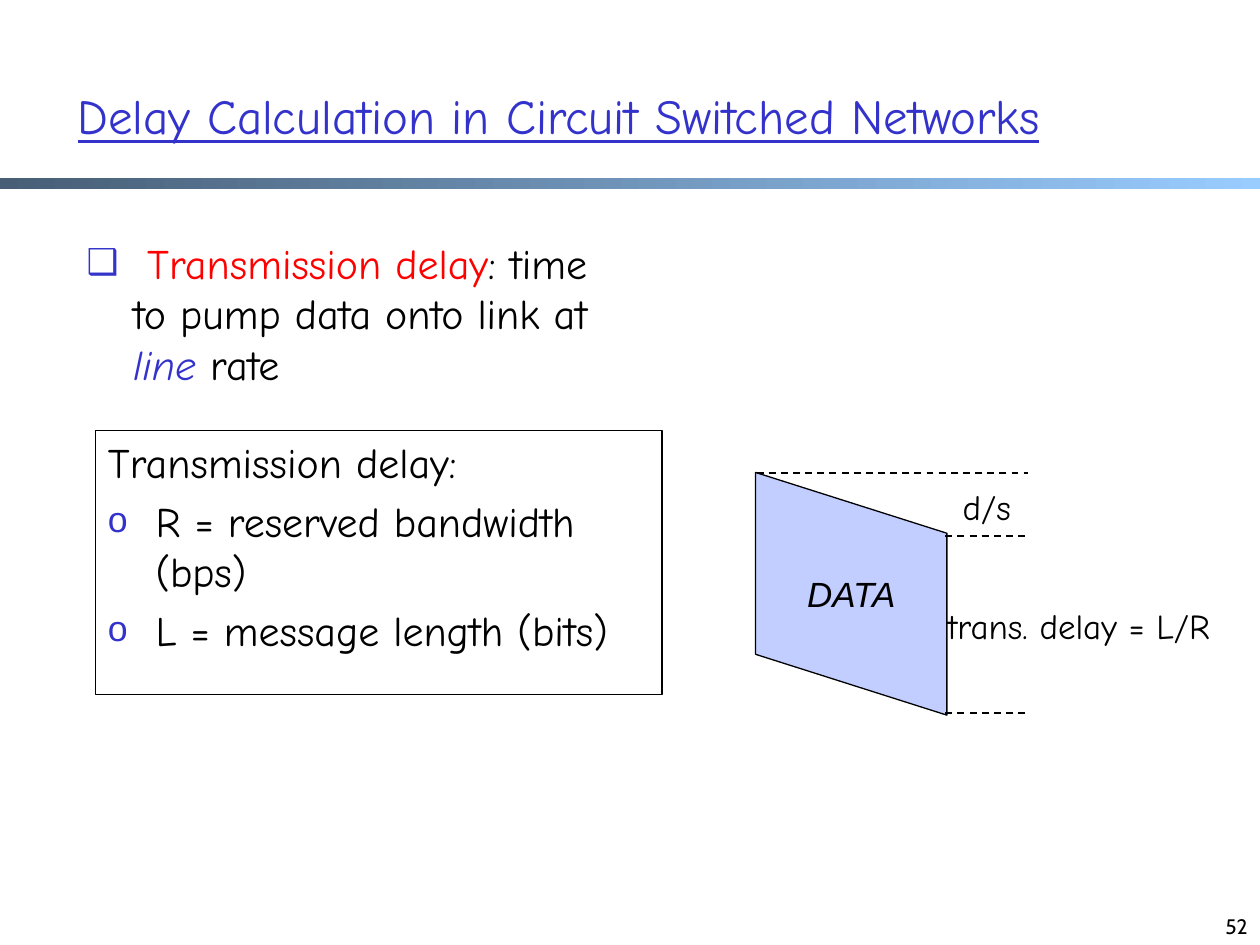
"""Build the slide on transmission delay in circuit switched networks."""
from lxml import etree
from pptx import Presentation
from pptx import util as u
from pptx.dml.color import RGBColor
from pptx.enum import dml, shapes, text
from pptx.oxml import ns

COLORS = {
    "black": "000000",
    "blue": "3333CC",
    "red": "FF0000",
    "data": "C1CEFF",
    "bar_start": "475E76",
    "bar_end": "99CCFF",
}


class SlideBuilder:
    """Hold the style and the current slide, and add elements to it."""

    font = "Comic Neue"

    def __init__(self, slide):
        self.slide = slide

    def color(self, name):
        """Return the named colour."""
        return RGBColor.from_string(COLORS[name])

    def bullet(self, paragraph, character, indent):
        """Give a paragraph a hanging blue bullet."""
        properties = paragraph._p.get_or_add_pPr()
        properties.set("marL", str(u.Cm(indent)))
        properties.set("indent", str(-u.Cm(indent)))
        bullet_color = etree.SubElement(properties, ns.qn("a:buClr"))
        etree.SubElement(bullet_color, ns.qn("a:srgbClr"), val=COLORS["blue"])
        etree.SubElement(properties, ns.qn("a:buSzPct"), val="85000")
        etree.SubElement(properties, ns.qn("a:buFont"), typeface="Arial")
        etree.SubElement(properties, ns.qn("a:buChar"), char=character)

    def run(self, paragraph, content, size, color="black", font=None, italic=False, underline=False):
        """Add one formatted run to a paragraph."""
        run = paragraph.add_run()
        run.text = content
        run.font.name = font or self.font
        run.font.size = u.Pt(size)
        run.font.color.rgb = self.color(color)
        run.font.italic = italic
        run.font.underline = underline

    def text_box(self, left, top, width, height, anchor=text.MSO_ANCHOR.TOP, wrap=True):
        """Add an empty text box and return its text frame."""
        shape = self.slide.shapes.add_textbox(u.Cm(left), u.Cm(top), u.Cm(width), u.Cm(height))
        frame = shape.text_frame
        frame.word_wrap = wrap
        frame.vertical_anchor = anchor
        return frame

    def shape(self, kind, left, top, width, height, fill=None):
        """Add an outlined preset shape."""
        shape = self.slide.shapes.add_shape(kind, u.Cm(left), u.Cm(top), u.Cm(width), u.Cm(height))
        shape.shadow.inherit = False
        if fill:
            shape.fill.solid()
            shape.fill.fore_color.rgb = self.color(fill)
        else:
            shape.fill.background()
        shape.line.color.rgb = self.color("black")
        shape.line.width = u.Pt(0.75)
        return shape

    def gradient_bar(self, left, top, width, height):
        """Add a bar that fades from left to right."""
        bar = self.shape(shapes.MSO_SHAPE.RECTANGLE, left, top, width, height)
        bar.line.fill.background()
        bar.fill.gradient()
        bar.fill.gradient_angle = 0
        for stop, name in zip(bar.fill.gradient_stops, ("bar_start", "bar_end")):
            stop.color.rgb = self.color(name)

    def dashed_line(self, left, right, y):
        """Add a horizontal dashed line."""
        line = self.slide.shapes.add_connector(
            shapes.MSO_CONNECTOR.STRAIGHT, u.Cm(left), u.Cm(y), u.Cm(right), u.Cm(y))
        line.line.color.rgb = self.color("black")
        line.line.width = u.Pt(1)
        line.line.dash_style = dml.MSO_LINE.DASH
        etree.SubElement(line._element.spPr, ns.qn("a:effectLst"))


def main():
    """Build and save the slide."""
    presentation = Presentation()
    presentation.slide_width, presentation.slide_height = u.Cm(25.43), u.Cm(19.08)
    builder = SlideBuilder(presentation.slides.add_slide(presentation.slide_layouts[6]))

    builder.gradient_bar(0, 3.6, 25.43, 0.21)

    number = builder.text_box(19.51, 17.81, 5.92, 1.27, text.MSO_ANCHOR.BOTTOM).paragraphs[0]
    number.alignment = text.PP_ALIGN.RIGHT
    builder.run(number, "52", 12, font="Cabin")

    title = builder.text_box(1.32, 0.74, 22.81, 3.18, text.MSO_ANCHOR.MIDDLE).paragraphs[0]
    builder.run(title, "Delay Calculation in Circuit Switched Networks", 28, "blue", underline=True)

    definitions = builder.shape(shapes.MSO_SHAPE.RECTANGLE, 1.93, 8.69, 11.43, 5.33).text_frame
    definitions.word_wrap = True
    definitions.vertical_anchor = text.MSO_ANCHOR.TOP
    heading = definitions.paragraphs[0]
    heading.alignment = text.PP_ALIGN.LEFT
    builder.run(heading, "Transmission delay:", 24)
    for definition in ("R = reserved bandwidth (bps)", "L = message length (bits)"):
        paragraph = definitions.add_paragraph()
        builder.bullet(paragraph, "o", 0.96)
        paragraph.alignment = text.PP_ALIGN.LEFT
        paragraph.space_before = u.Pt(4.8)
        builder.run(paragraph, definition, 24)

    data = builder.shape(shapes.MSO_SHAPE.PARALLELOGRAM, 14.73, 10.06, 4.9, 3.86, "data")
    data.rotation = 90
    data.adjustments[0] = 0.318
    frame = data.text_frame
    frame.word_wrap = False
    frame.vertical_anchor = text.MSO_ANCHOR.MIDDLE
    frame._txBody.bodyPr.set("vert", "vert270")
    frame.paragraphs[0].alignment = text.PP_ALIGN.CENTER
    builder.run(frame.paragraphs[0], "DATA", 20, font="Arial", italic=True)

    for left, y in ((15.27, 9.55), (19.08, 10.82), (19.08, 14.4)):
        builder.dashed_line(left, 20.75, y)

    for label, left, top, width in (("d/s", 19.18, 9.68, 1.63), ("trans. delay = L/R", 18.87, 12.09, 6.55)):
        paragraph = builder.text_box(left, top, width, 1.1, wrap=False).paragraphs[0]
        builder.run(paragraph, label, 20)

    summary = builder.text_box(1.5, 4.67, 11.43, 3.33).paragraphs[0]
    builder.bullet(summary, "❑", 0.94)
    builder.run(summary, " Transmission delay", 24, "red")
    builder.run(summary, ": time to pump data onto link at ", 24)
    builder.run(summary, "line ", 24, "blue", italic=True)
    builder.run(summary, "rate", 24)

    presentation.save("out.pptx")


if __name__ == "__main__":
    main()
